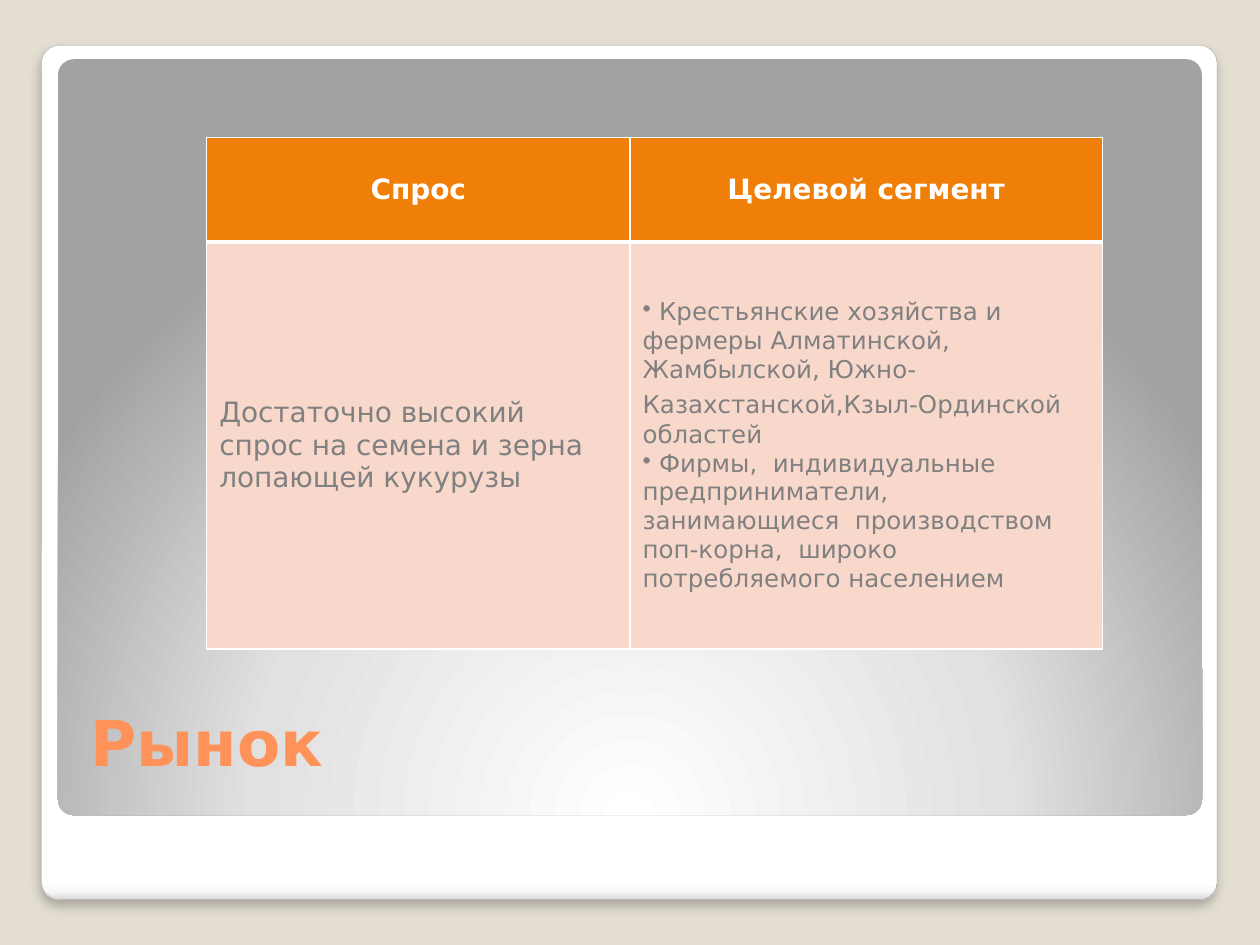
from lxml.etree import SubElement
from pptx import Presentation
from pptx.dml.color import RGBColor
from pptx.enum.shapes import MSO_SHAPE
from pptx.enum.text import MSO_ANCHOR, PP_ALIGN
from pptx.oxml import parse_xml
from pptx.oxml.ns import nsdecls, qn
from pptx.util import Inches, Pt


def colour(value):
    return RGBColor.from_string(value)


class SlideBuilder:
    """Holds the shared style and the current slide, and draws elements on it."""

    font = "DejaVu Sans"
    white, grey = "FFFFFF", "808080"
    orange, peach, header = "FF9258", "F9D8CC", "F07F09"

    def __init__(self, deck):
        self.page = deck.slides.add_slide(deck.slide_layouts[6])

    def background(self, value):
        fill = self.page.background.fill
        fill.solid()
        fill.fore_color.rgb = colour(value)

    def style(self, font, size, value, bold=False):
        font.name, font.size, font.bold = self.font, Pt(size), bold
        font.color.rgb = colour(value)

    def panel(self, left, top, width, height, stops, direction, line=None):
        panel = self.page.shapes.add_shape(
            MSO_SHAPE.ROUNDED_RECTANGLE,
            Inches(left), Inches(top), Inches(width), Inches(height))
        panel.adjustments[0] = 0.021
        panel.shadow.inherit = False
        panel.fill.background()
        marks = "".join(
            f'<a:gs pos="{place * 1000}"><a:srgbClr val="{value}"/></a:gs>'
            for place, value in stops)
        properties = panel._element.spPr
        properties.replace(properties.find(qn("a:noFill")), parse_xml(
            f'<a:gradFill {nsdecls("a")} rotWithShape="1">'
            f'<a:gsLst>{marks}</a:gsLst>{direction}</a:gradFill>'))
        if line:
            panel.line.color.rgb = colour(line)
            panel.line.width = Pt(0.16)
        else:
            panel.line.fill.background()
        return panel

    def shadow(self, panel, blur, distance, opacity):
        effects = panel._element.spPr.find(qn("a:effectLst"))
        outer = SubElement(
            effects, qn("a:outerShdw"), blurRad=str(Pt(blur)),
            dist=str(Pt(distance)), dir="5400000", algn="tl", rotWithShape="0")
        tint = SubElement(outer, qn("a:srgbClr"), val="000000")
        SubElement(tint, qn("a:alpha"), val=str(opacity * 1000))

    def title(self, text, left, top, width, height):
        box = self.page.shapes.add_textbox(
            Inches(left), Inches(top), Inches(width), Inches(height))
        frame = box.text_frame
        frame.word_wrap = True
        frame.vertical_anchor = MSO_ANCHOR.BOTTOM
        para = frame.paragraphs[0]
        para.text = text
        self.style(para.font, 36, self.orange, True)

    def table(self, left, top, widths, heights):
        table = self.page.shapes.add_table(
            len(heights), len(widths), Inches(left), Inches(top),
            Inches(sum(widths)), Inches(sum(heights))).table
        for column, width in zip(table.columns, widths):
            column.width = Inches(width)
        for row, height in zip(table.rows, heights):
            row.height = Inches(height)
        return table

    def cell(self, cell, fill, top_border, bottom_border):
        cell.fill.solid()
        cell.fill.fore_color.rgb = colour(fill)
        cell.vertical_anchor = MSO_ANCHOR.MIDDLE
        properties = cell._tc.get_or_add_tcPr()
        borders = {"L": 1, "R": 1, "T": top_border, "B": bottom_border}
        for place, (side, width) in enumerate(borders.items()):
            properties.insert(place, parse_xml(
                f'<a:ln{side} {nsdecls("a")} w="{Pt(width)}"><a:solidFill>'
                f'<a:srgbClr val="{self.white}"/></a:solidFill></a:ln{side}>'))

    def header_cell(self, cell, text):
        self.cell(cell, self.header, 1, 3)
        para = cell.text_frame.paragraphs[0]
        para.text, para.alignment = text, PP_ALIGN.CENTER
        self.style(para.font, 16, self.white, True)

    def body_cell(self, cell, paragraphs, size, bullet=False):
        self.cell(cell, self.peach, 3, 1)
        frame = cell.text_frame
        for index, spans in enumerate(paragraphs):
            para = frame.add_paragraph() if index else frame.paragraphs[0]
            self.style(para.font, size, self.grey)
            if bullet:
                SubElement(para._p.get_or_add_pPr(), qn("a:buChar"), char="•")
            for text, span_size in spans:
                span = para.add_run()
                span.text = text
                self.style(span.font, span_size, self.grey)


def main():
    deck = Presentation()
    deck.slide_width, deck.slide_height = Inches(10), Inches(7.5)
    builder = SlideBuilder(deck)
    builder.background("E3DED1")
    frame = builder.panel(
        0.33, 0.36, 9.33, 6.78,
        [(0, "FFFFFF"), (98, "FFFFFF"), (99, "F7F7F7"), (100, "DADADA")],
        '<a:lin ang="5400000" scaled="0"/>', "A4A4A4")
    builder.shadow(frame, 6, 4, 25)
    builder.panel(
        0.46, 0.47, 9.08, 6, [(0, "FFFFFF"), (55, "E1E1E1"), (100, "A2A2A2")],
        '<a:path path="circle"><a:fillToRect l="50000" t="175000" '
        'r="50000" b="-75000"/></a:path>')
    builder.title("Рынок", 0.62, 5.31, 8.95, 0.92)

    table = builder.table(1.64, 1.09, [3.36, 3.75], [0.83, 3.23])
    for column, text in enumerate(["Спрос", "Целевой сегмент"]):
        builder.header_cell(table.cell(0, column), text)
    demand = "Достаточно высокий спрос на семена и зерна лопающей кукурузы"
    builder.body_cell(table.cell(1, 0), [[(demand, 16)]], 16)
    farms = (" Крестьянские хозяйства и фермеры Алматинской, Жамбылской, "
             "Южно-Казахстанской,Кзыл-Ординской")
    firms = (" Фирмы,  индивидуальные предприниматели, занимающиеся  "
             "производством поп-корна,  широко потребляемого населением")
    builder.body_cell(
        table.cell(1, 1),
        [[(farms, 14), (" ", 18), ("областей", 14)], [(firms, 14)]], 14, True)
    deck.save("out.pptx")


if __name__ == "__main__":
    main()
